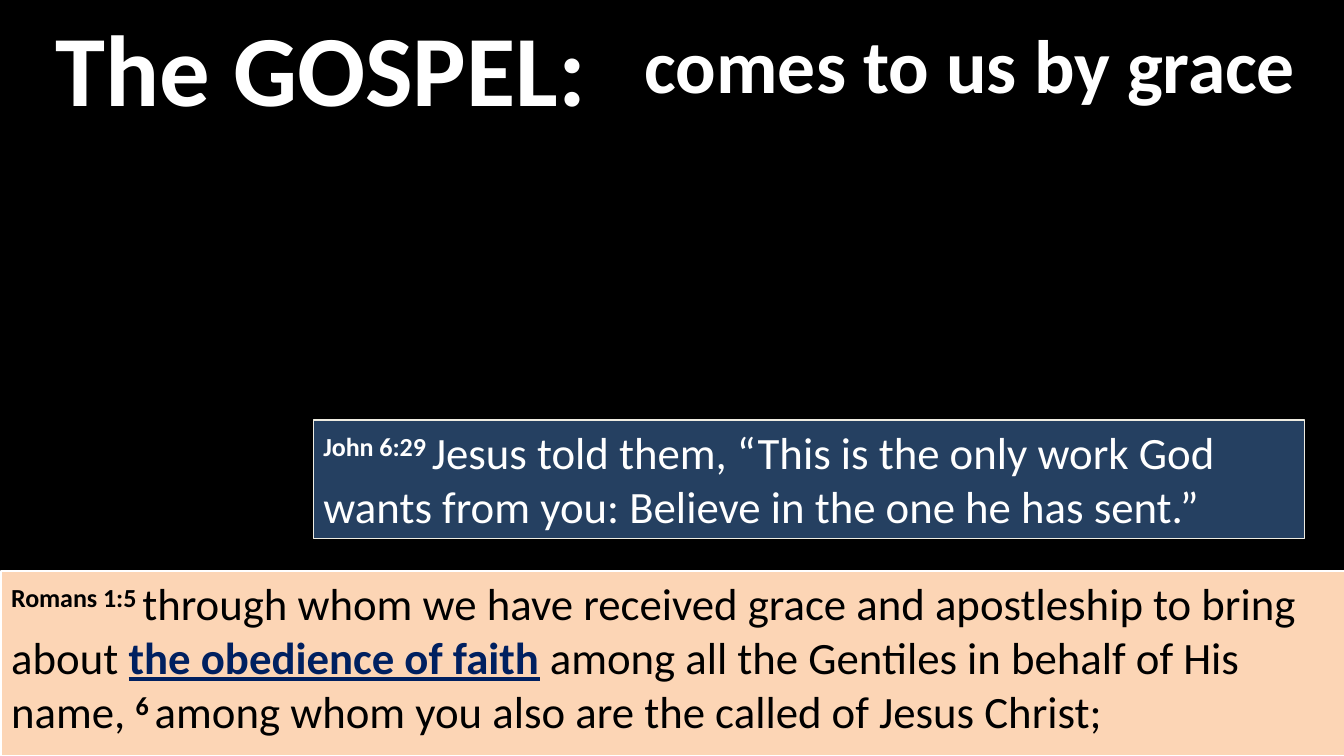
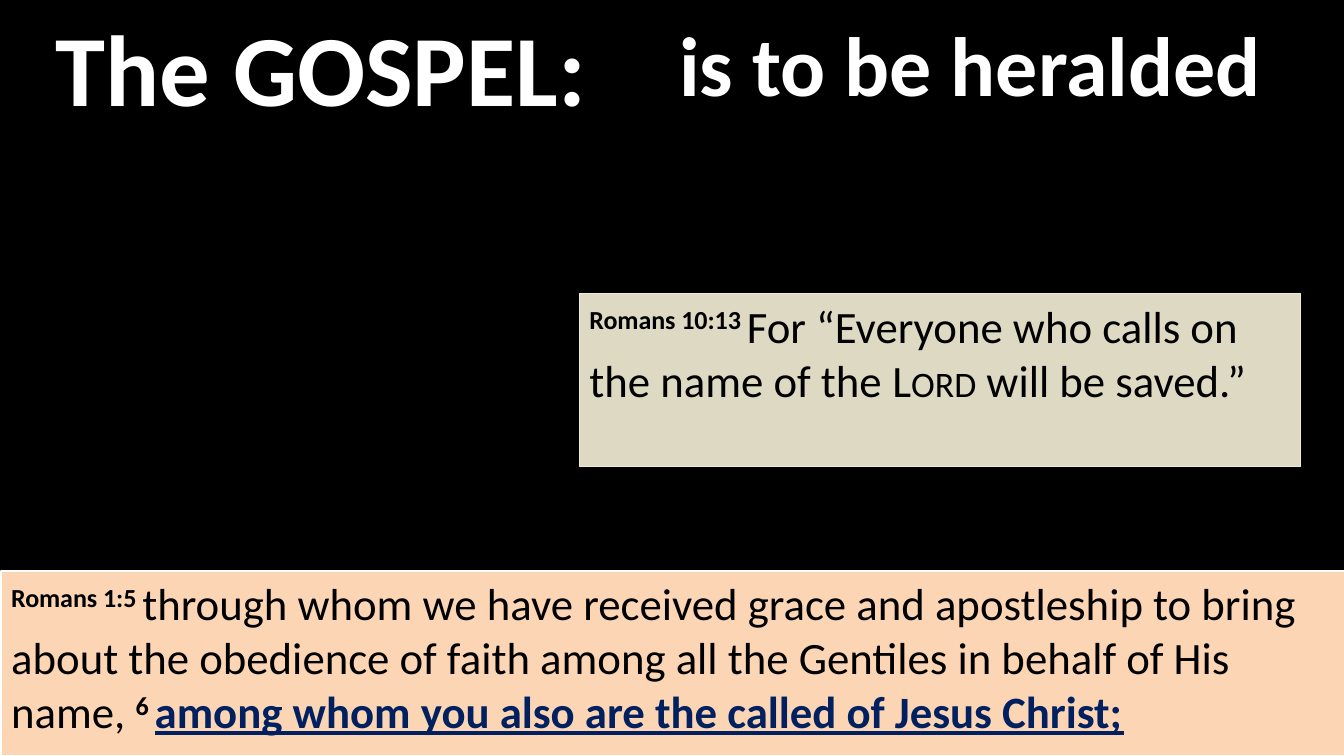
from pptx import Presentation
from pptx.dml.color import RGBColor
from pptx.enum.shapes import MSO_SHAPE as Shape
from pptx.enum.text import MSO_ANCHOR as Anchor, PP_ALIGN as Align
from pptx.util import Pt

BLACK = RGBColor(0x00, 0x00, 0x00)
WHITE = RGBColor(0xFF, 0xFF, 0xFF)
NAVY = RGBColor(0x00, 0x20, 0x60)
BLUE = RGBColor(0x25, 0x40, 0x61)
PEACH = RGBColor(0xFC, 0xD5, 0xB5)
TAN = RGBColor(0xDD, 0xD9, 0xC3)
CREAM = RGBColor(0xEE, 0xEC, 0xE1)

FONT = "Calibri"
WIDTH, HEIGHT = 960, 540
VERSE_SIZE = 32
HEADING = "The GOSPEL:"
FAITH = "the obedience of faith"
CALLED = "among whom you also are the called of Jesus Christ;"

ROMANS = [
    ("Romans 1:5 ", "reference"),
    ("through whom we have received grace and apostleship to bring about ", "plain"),
    (FAITH, "plain"),
    (" among all the Gentiles in behalf of His name, ", "plain"),
    ("6 ", "reference"),
    (CALLED, "plain"),
]

PAGES = [
    {
        "claim": "comes to us by grace", "claim_size": 54, "marked": FAITH,
        "place": (223.9, 300, 708, 85), "fill": BLUE, "ink": WHITE,
        "quote": [
            ("John 6:29 ", "reference"),
            ("Jesus told them, “This is the only work God wants from you: "
             "Believe in the one he has sent.”", "plain"),
        ],
    },
    {
        "claim": "is to be heralded", "claim_size": 60, "marked": CALLED,
        "place": (414, 209.7, 515, 123.5), "fill": TAN, "ink": BLACK,
        "quote": [
            ("Romans 10:13 ", "reference"),
            ("For “Everyone who calls on the name of the ", "plain"),
            ("Lord", "small"),
            (" will be saved.”", "plain"),
        ],
    },
]


def add_span(para, text, size, color, style="plain"):
    span = para.add_run()
    span.text = text
    font = span.font
    font.name, font.size = FONT, Pt(size)
    font.bold = style in ("title", "reference", "marked")
    font.color.rgb = NAVY if style == "marked" else color
    if style == "marked":
        font.underline = True
    elif style == "reference":
        span._r.get_or_add_rPr().set("baseline", "30000")
    elif style == "small":
        span._r.get_or_add_rPr().set("cap", "small")


def add_title(page, text, size, place, align, indent=7.2):
    box = page.shapes.add_textbox(*map(Pt, place))
    frame = box.text_frame
    frame.word_wrap = True
    frame.vertical_anchor = Anchor.MIDDLE
    frame.margin_left = Pt(indent)
    para = frame.paragraphs[0]
    para.alignment = align
    add_span(para, text, size, WHITE, "title")


def add_verse(page, spans, place, fill, ink, border, border_width):
    box = page.shapes.add_shape(Shape.RECTANGLE, *map(Pt, place))
    box.shadow.inherit = False
    box.fill.solid()
    box.fill.fore_color.rgb = fill
    box.line.color.rgb = border
    box.line.width = Pt(border_width)
    frame = box.text_frame
    frame.word_wrap = True
    frame.vertical_anchor = Anchor.TOP
    para = frame.paragraphs[0]
    para.alignment = Align.LEFT
    for text, style in spans:
        add_span(para, text, VERSE_SIZE, ink, style)


def add_page(deck, content):
    page = deck.slides.add_slide(deck.slide_layouts[6])
    page.background.fill.solid()
    page.background.fill.fore_color.rgb = BLACK
    add_title(page, HEADING, 72, (0, 0, 450, 95), Align.LEFT, indent=39.7)
    add_title(page, content["claim"], content["claim_size"], (426, 0, 534, 90), Align.CENTER)
    romans = [(text, "marked" if text == content["marked"] else style)
              for text, style in ROMANS]
    add_verse(page, romans, (0.9, 408, WIDTH, 132), PEACH, BLACK, WHITE, 1.5)
    add_verse(page, content["quote"], content["place"], content["fill"],
              content["ink"], CREAM, 0.75)


def main():
    """Build the two scripture slides and save the deck."""
    deck = Presentation()
    deck.slide_width, deck.slide_height = Pt(WIDTH), Pt(HEIGHT)
    for content in PAGES:
        add_page(deck, content)
    deck.save("out.pptx")


if __name__ == "__main__":
    main()
